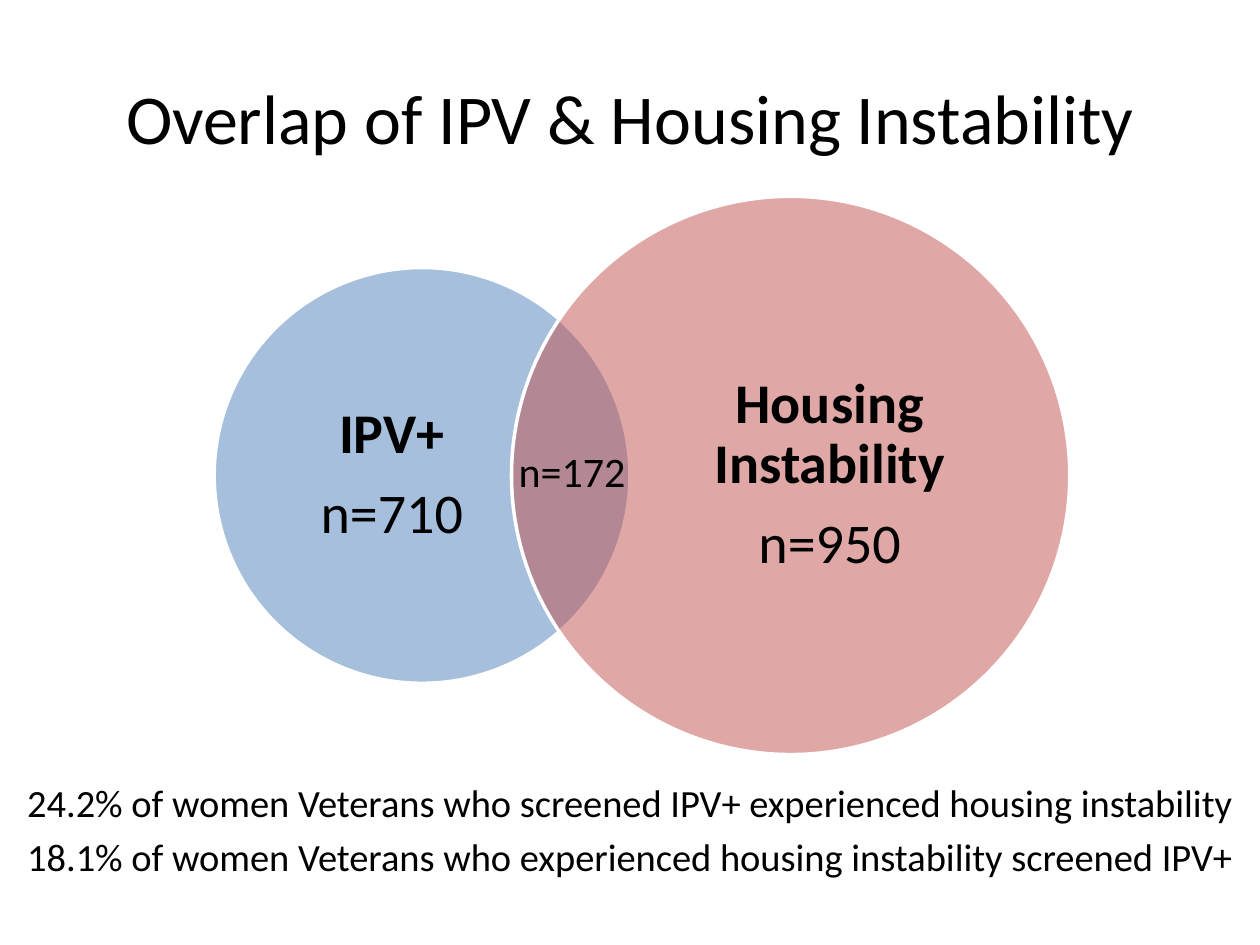
import pptx
import pptx.dml.color
import pptx.enum.shapes
import pptx.enum.text
import pptx.oxml.ns
import pptx.util
from lxml import etree

Pt = pptx.util.Pt
ANCHOR = pptx.enum.text.MSO_ANCHOR

COLORS = {"text": "000000", "ipv": "4F81BD", "housing": "C0504D", "outline": "FFFFFF"}
FONT = "Calibri"
HEADING = "Overlap of IPV & Housing Instability"
FINDINGS = [
    "24.2% of women Veterans who screened IPV+ experienced housing instability",
    "18.1% of women Veterans who experienced housing instability screened IPV+",
]
CENTER_Y = 271.7
# Circle and label boxes are centred on CENTER_Y: left, width, (label) height
GROUPS = [
    {"name": "IPV+", "count": "n=710", "color": "ipv",
     "circle": (122.4, 237.6), "label": (155.5, 136.8, 181.4)},
    {"name": "Housing Instability", "count": "n=950", "color": "housing",
     "circle": (292.3, 319), "label": (382.3, 183.6, 243.4)},
]
OVERLAP = "n=172"


def rgb(name):
    return pptx.dml.color.RGBColor.from_string(COLORS[name])


def place(shape, left, top, width, height):
    shape.left, shape.top = Pt(left), Pt(top)
    shape.width, shape.height = Pt(width), Pt(height)


def write(frame, lines, size, bold_first=False, **spacing):
    """Fill the frame with centred lines; spacing holds paragraph properties."""
    frame.word_wrap = True
    frame.auto_size = pptx.enum.text.MSO_AUTO_SIZE.NONE
    frame.text = "\n".join(lines)
    for index, paragraph in enumerate(frame.paragraphs):
        paragraph.alignment = pptx.enum.text.PP_ALIGN.CENTER
        paragraph.font.name = FONT
        paragraph.font.size = Pt(size)
        paragraph.font.bold = bold_first and index == 0
        paragraph.font.color.rgb = rgb("text")
        for name, value in spacing.items():
            setattr(paragraph, name, value)


def remove_bullets(frame):
    for paragraph in frame.paragraphs:
        properties = paragraph._p.get_or_add_pPr()
        properties.set("marL", "0")
        properties.set("indent", "0")
        etree.SubElement(properties, pptx.oxml.ns.qn("a:buNone"))


def add_circle(slide, left, diameter, color):
    circle = slide.shapes.add_shape(
        pptx.enum.shapes.MSO_SHAPE.OVAL,
        Pt(left), Pt(CENTER_Y - diameter / 2), Pt(diameter), Pt(diameter))
    circle.shadow.inherit = False
    circle.fill.solid()
    circle.fill.fore_color.rgb = rgb(color)
    circle.line.color.rgb = rgb("outline")
    circle.line.width = Pt(2)
    fill_color = circle.fill._xPr.find(".//" + pptx.oxml.ns.qn("a:srgbClr"))
    etree.SubElement(fill_color, pptx.oxml.ns.qn("a:alpha"), val="50000")


def add_label(slide, left, width, height, lines):
    label = slide.shapes.add_textbox(
        Pt(left), Pt(CENTER_Y - height / 2), Pt(width), Pt(height))
    frame = label.text_frame
    frame.margin_left = frame.margin_right = frame.margin_top = frame.margin_bottom = 0
    frame.vertical_anchor = ANCHOR.MIDDLE
    write(frame, lines, 32, bold_first=True, line_spacing=0.9, space_after=Pt(11.2))


def main():
    presentation = pptx.Presentation()
    presentation.slide_width, presentation.slide_height = Pt(720), Pt(540)
    slide = presentation.slides.add_slide(presentation.slide_layouts[1])

    title = slide.shapes.title
    place(title, 36, 21.6, 648, 90)
    write(title.text_frame, [HEADING], 40)
    title.text_frame.vertical_anchor = ANCHOR.MIDDLE

    findings = slide.placeholders[1]
    place(findings, 0, 441.4, 720, 56.2)
    write(findings.text_frame, FINDINGS, 22, space_before=Pt(4.4))
    remove_bullets(findings.text_frame)

    for group in GROUPS:
        add_circle(slide, *group["circle"], group["color"])
        add_label(slide, *group["label"], [group["name"], group["count"]])

    overlap = slide.shapes.add_textbox(Pt(288), Pt(251.3), Pt(77.8), Pt(36))
    write(overlap.text_frame, [OVERLAP], 24)

    presentation.save("out.pptx")


if __name__ == "__main__":
    main()
